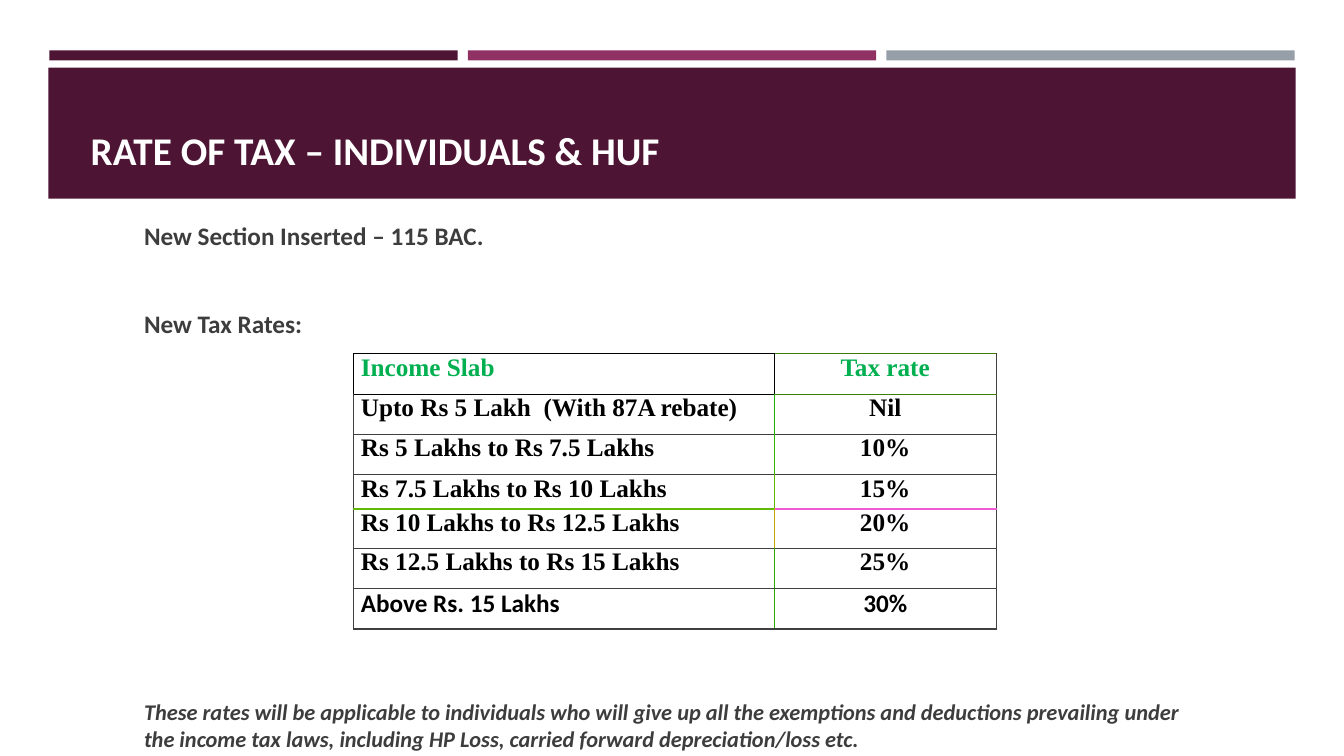
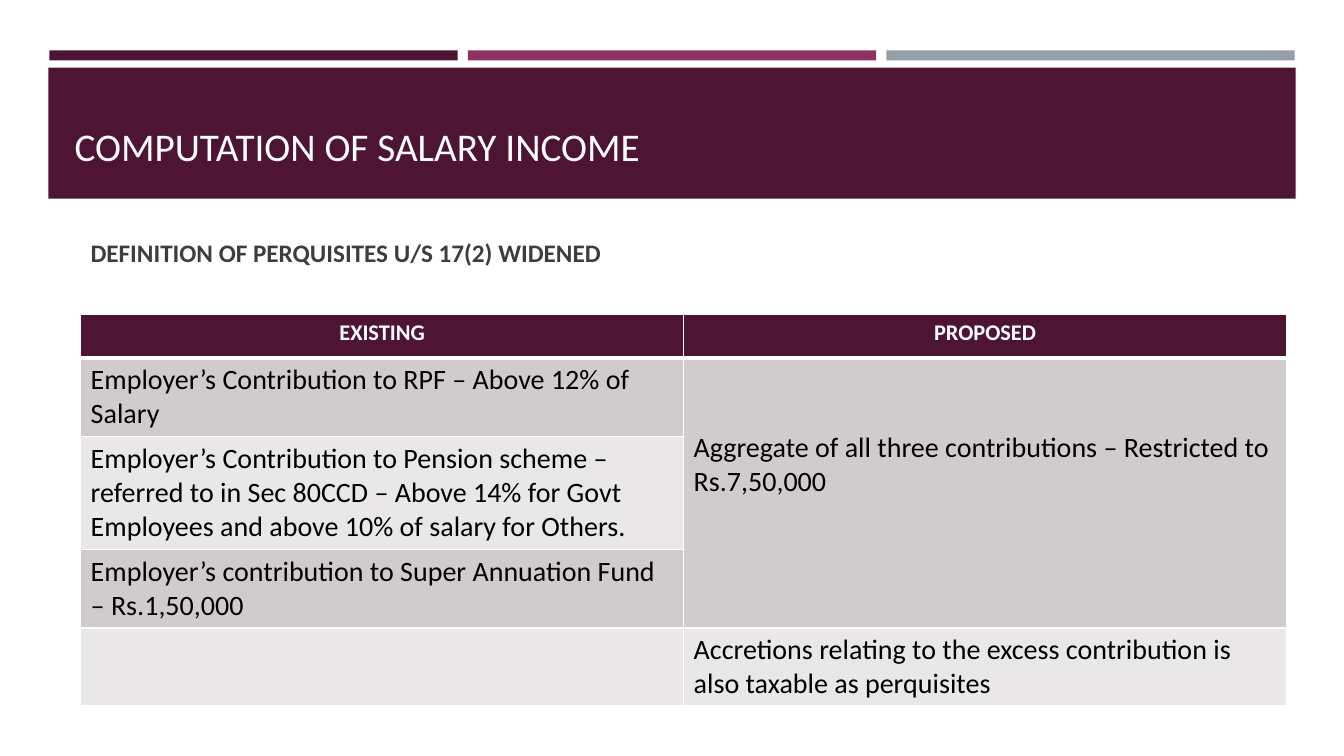
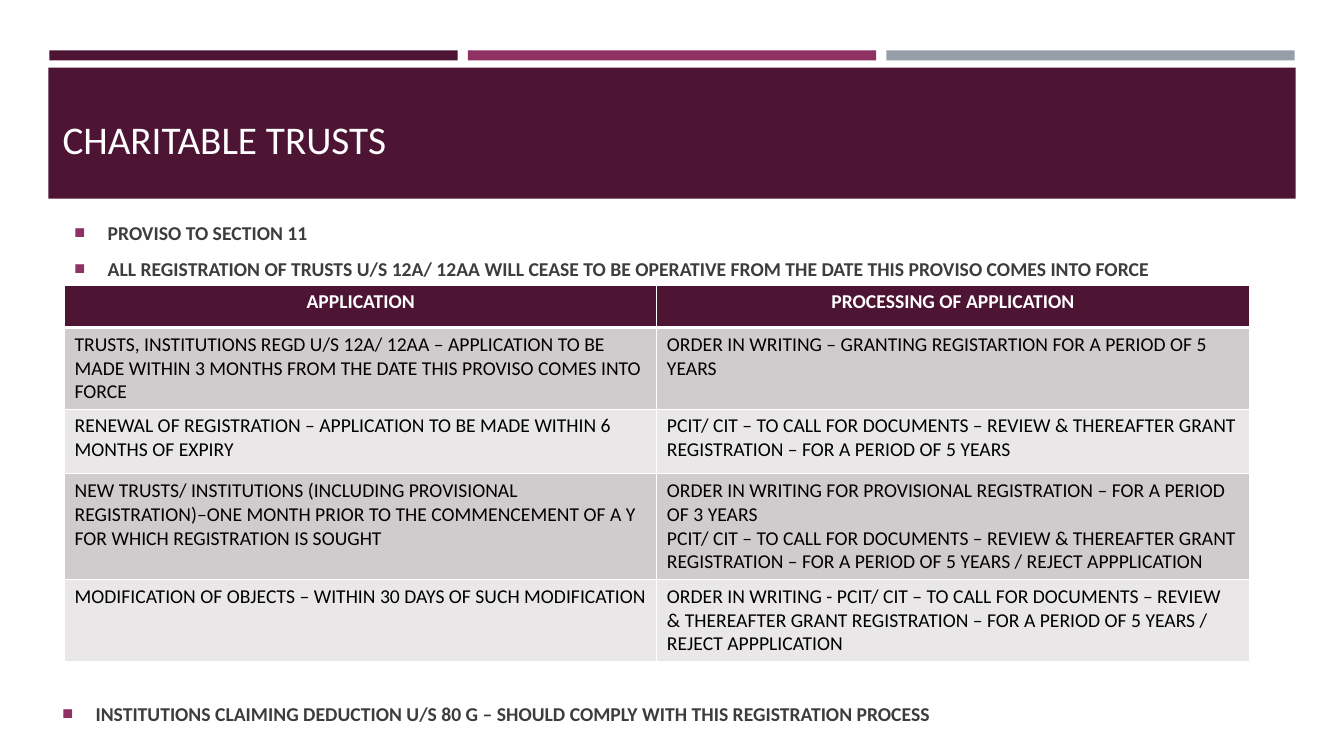
from lxml import etree
from pptx import Presentation
from pptx.dml.color import RGBColor
from pptx.enum import shapes, text
from pptx.oxml import ns
from pptx.util import Inches, Pt

COLORS = {
    "plum": "4D1434", "berry": "903163", "steel": "969FA7",
    "white": "FFFFFF", "ink": "3D3D3D", "black": "000000",
    "band_dark": "D0CCCE", "band_light": "E9E7E8", "header_green": "00B050",
    "edge": "404040", "olive": "407C09", "green": "20AE04", "leaf": "30B704",
    "lime": "60B904", "gold": "C0A904", "moss": "30A804", "pink": "F05BD5",
}
LEFT, CENTER = text.PP_ALIGN.LEFT, text.PP_ALIGN.CENTER


def write(frame, words, size, color, bold=False, italic=False,
          align=LEFT, font="Calibri", after=0):
    """Fill a text frame; each line of words becomes a paragraph."""
    frame.text = words
    frame.word_wrap = True
    for para in frame.paragraphs:
        para.alignment = align
        para.space_before, para.space_after = Pt(0), Pt(after)
        for span in para.runs:
            span.font.name, span.font.size = font, Pt(size)
            span.font.bold, span.font.italic = bold, italic
            span.font.color.rgb = RGBColor.from_string(COLORS[color])


def set_borders(cell, **edges):
    """Draw cell edges, given as L, R, T, B = (colour name, points), in that order."""
    props = cell._tc.get_or_add_tcPr()
    for side, (color, width) in edges.items():
        line = etree.SubElement(props, ns.qn(f"a:ln{side}"), w=str(Pt(width)))
        solid = etree.SubElement(line, ns.qn("a:solidFill"))
        etree.SubElement(solid, ns.qn("a:srgbClr"), val=COLORS[color])


deck = Presentation()
deck.slide_width, deck.slide_height = Inches(13.33), Inches(7.5)
layout = deck.slide_layouts[5]

# Titles: words, bold, box.  Notes: words, box, size, italic, space after, bulleted.
PAGES = [
    ("RATE OF TAX – INDIVIDUALS & HUF", True, (0.8, 0.96, 11.11, 0.81), [
        ("New Section Inserted – 115 BAC.\nNew Tax Rates:",
         (1.33, 2.14, 10.49, 1.3), 18, False, 41, False),
        ("These rates will be applicable to individuals who will give up all the "
         "exemptions and deductions prevailing under the income tax laws, including "
         "HP Loss, carried forward depreciation/loss etc.",
         (1.33, 6.88, 10.49, 0.62), 16, True, 0, False),
    ]),
    ("COMPUTATION OF SALARY INCOME", False, (0.64, 0.77, 12.06, 0.96), [
        ("DEFINITION OF PERQUISITES U/S 17(2) WIDENED",
         (0.8, 2.31, 6.6, 0.4), 18, False, 0, False),
    ]),
    ("CHARITABLE TRUSTS", False, (0.52, 0.55, 12.06, 1.11), [
        ("PROVISO TO SECTION 11\nALL REGISTRATION OF TRUSTS U/S 12A/ 12AA WILL CEASE "
         "TO BE OPERATIVE FROM THE DATE THIS PROVISO COMES INTO FORCE",
         (0.64, 2.14, 12.06, 0.69), 14, False, 9, True),
        ("INSTITUTIONS CLAIMING DEDUCTION U/S 80 G – SHOULD COMPLY WITH THIS "
         "REGISTRATION PROCESS", (0.52, 6.91, 12.06, 0.34), 14, False, 0, True),
    ]),
]

for title_words, bold, title_box, notes in PAGES:
    page = deck.slides.add_slide(layout)
    title = page.shapes.title
    title.left, title.top, title.width, title.height = map(Inches, title_box)
    write(title.text_frame, title_words, 28, "white", bold)
    title.text_frame.vertical_anchor = text.MSO_ANCHOR.BOTTOM
    title.text_frame.auto_size = text.MSO_AUTO_SIZE.NONE
    for words, place, size, italic, after, bulleted in notes:
        box = page.shapes.add_textbox(*map(Inches, place))
        write(box.text_frame, words, size, "ink", True, italic, after=after)
        for para in box.text_frame.paragraphs if bulleted else []:
            props = para._p.get_or_add_pPr()
            props.set("marL", str(Inches(0.33)))
            props.set("indent", str(-Inches(0.33)))
            tint = etree.SubElement(props, ns.qn("a:buClr"))
            etree.SubElement(tint, ns.qn("a:srgbClr"), val=COLORS["berry"])
            etree.SubElement(props, ns.qn("a:buSzPct"), val="92000")
            etree.SubElement(props, ns.qn("a:buFont"), typeface="Arial")
            etree.SubElement(props, ns.qn("a:buChar"), char="■")

tax_page, salary_page, trust_page = deck.slides

# The bands are drawn once and moved to the layout that all pages share.
bands = [(color, (0.49 + 4.15 * i, 0.5, 4.05, 0.1))
         for i, color in enumerate(("plum", "berry", "steel"))]
bands.append(("plum", (0.48, 0.67, 12.37, 1.3)))
for number, (color, place) in enumerate(bands):
    band = tax_page.shapes.add_shape(shapes.MSO_SHAPE.RECTANGLE, *map(Inches, place))
    band.shadow.inherit = False
    band.fill.solid()
    band.fill.fore_color.rgb = RGBColor.from_string(COLORS[color])
    band.line.fill.background()
    band.element.nvSpPr.cNvPr.set("id", str(100 + number))
    layout.shapes.element.insert(2 + number, band.element)

# Tax slabs: slab, rate, row height, middle edge, lower edges of both cells.
SLABS = [
    ("Income Slab", "Tax rate", 0.4, "black", ("black", "olive")),
    ("Upto Rs 5 Lakh  (With 87A rebate)", "Nil", 0.4, "green", ("edge", "edge")),
    ("Rs 5 Lakhs to Rs 7.5 Lakhs", "10%", 0.4, "leaf", ("edge", "edge")),
    ("Rs 7.5 Lakhs to Rs 10 Lakhs", "15%", 0.34, "lime", ("lime", "pink")),
    ("Rs 10 Lakhs to Rs 12.5 Lakhs", "20%", 0.39, "gold", ("edge", "edge")),
    ("Rs 12.5 Lakhs to Rs 15 Lakhs", "25%", 0.4, "moss", ("edge", "edge")),
    ("Above Rs. 15 Lakhs", "30%", 0.4, "moss", ("edge", "edge")),
]
slab_table = tax_page.shapes.add_table(
    len(SLABS), 2, Inches(3.51), Inches(3.51), Inches(6.37), Inches(2.73)).table
slab_table.first_row = slab_table.horz_banding = False
for column, width in zip(slab_table.columns, (4.17, 2.2)):
    column.width = Inches(width)
upper = ("black", "olive")
for r, (slab, rate, height, middle, lower) in enumerate(SLABS):
    slab_table.rows[r].height = Inches(height)
    sides = ("black" if r == 0 else "edge", middle, "edge")
    for c, words in enumerate((slab, rate)):
        cell = slab_table.cell(r, c)
        write(cell.text_frame, words, 18, "black" if r else "header_green", True,
              align=CENTER if c else LEFT,
              font="Calibri" if r == len(SLABS) - 1 else "Times New Roman")
        cell.margin_left = cell.margin_right = Inches(0.07)
        cell.margin_top = cell.margin_bottom = 0
        set_borders(cell, L=(sides[c], 1), R=(sides[c + 1], 1),
                    T=(upper[c], 1), B=(lower[c], 1))
        cell.fill.background()
    upper = lower

# Two-column tables: page, place, header size, body size, row heights, rows.
COMPARISONS = [
    (salary_page, (0.8, 3.12, 11.96, 3.88), 16, 20, (0.43, 0.78, 1.12, 0.78, 0.77), [
        ("EXISTING", "PROPOSED"),
        ("Employer’s Contribution to RPF – Above 12% of Salary",
         "Aggregate of all three contributions – Restricted to Rs.7,50,000"),
        ("Employer’s Contribution to Pension scheme – referred to in Sec 80CCD – "
         "Above 14% for Govt Employees and above 10% of salary for Others.", ""),
        ("Employer’s contribution to Super Annuation Fund – Rs.1,50,000", ""),
        ("", "Accretions relating to the excess contribution is also taxable as "
         "perquisites"),
    ]),
    (trust_page, (0.64, 2.83, 11.75, 3.73), 14, 14, (0.42, 0.81, 0.64, 1.05, 0.81), [
        ("APPLICATION", "PROCESSING OF APPLICATION"),
        ("TRUSTS, INSTITUTIONS REGD U/S 12A/ 12AA – APPLICATION TO BE MADE WITHIN "
         "3 MONTHS FROM THE DATE THIS PROVISO COMES INTO FORCE",
         "ORDER IN WRITING – GRANTING REGISTARTION FOR A PERIOD OF 5 YEARS"),
        ("RENEWAL OF REGISTRATION – APPLICATION TO BE MADE WITHIN 6 MONTHS OF EXPIRY",
         "PCIT/ CIT – TO CALL FOR DOCUMENTS – REVIEW & THEREAFTER GRANT REGISTRATION "
         "– FOR A PERIOD OF 5 YEARS"),
        ("NEW TRUSTS/ INSTITUTIONS (INCLUDING PROVISIONAL REGISTRATION)–ONE MONTH "
         "PRIOR TO THE COMMENCEMENT OF A Y FOR WHICH REGISTRATION IS SOUGHT",
         "ORDER IN WRITING FOR PROVISIONAL REGISTRATION – FOR A PERIOD OF 3 YEARS\n"
         "PCIT/ CIT – TO CALL FOR DOCUMENTS – REVIEW & THEREAFTER GRANT REGISTRATION "
         "– FOR A PERIOD OF 5 YEARS / REJECT APPPLICATION"),
        ("MODIFICATION OF OBJECTS – WITHIN 30 DAYS OF SUCH MODIFICATION",
         "ORDER IN WRITING - PCIT/ CIT – TO CALL FOR DOCUMENTS – REVIEW & THEREAFTER "
         "GRANT REGISTRATION – FOR A PERIOD OF 5 YEARS / REJECT APPPLICATION"),
    ]),
]
for page, place, header_size, body_size, heights, rows in COMPARISONS:
    table = page.shapes.add_table(len(rows), 2, *map(Inches, place)).table
    for r, (row, height) in enumerate(zip(rows, heights)):
        table.rows[r].height = Inches(height)
        for c, words in enumerate(row):
            cell = table.cell(r, c)
            thin, below = ("white", 1), ("white", 1 if r else 3)
            top = ("white", 3 if r == 1 else 1)
            set_borders(cell, L=thin, R=thin, T=top, B=below)
            cell.fill.solid()
            if r == 0:
                fill = "plum"
                write(cell.text_frame, words, header_size, "white", True, align=CENTER)
            else:
                fill = "band_dark" if r % 2 else "band_light"
                write(cell.text_frame, words, body_size, "black")
            cell.fill.fore_color.rgb = RGBColor.from_string(COLORS[fill])
    if page is salary_page:
        limit_cell = table.cell(1, 1)
        limit_cell.merge(table.cell(3, 1))
        limit_cell.margin_top = Inches(0.72)

deck.save("out.pptx")
